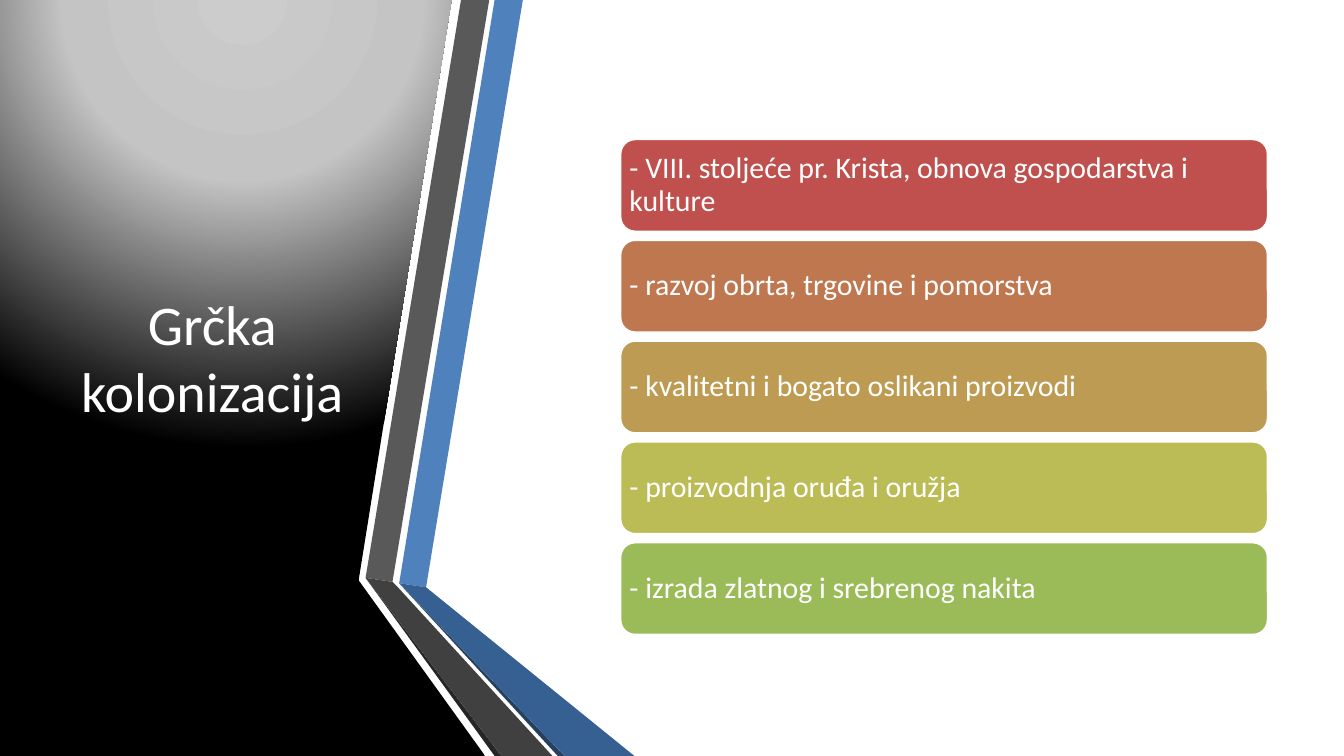
"""Builds the slide on Greek colonisation."""
from lxml import etree
from pptx import Presentation
from pptx.dml.color import RGBColor
from pptx.enum.shapes import MSO_SHAPE
from pptx.enum.text import MSO_ANCHOR, PP_ALIGN
from pptx.oxml.ns import qn
from pptx.util import Inches, Pt

ROUND_RECT = MSO_SHAPE.ROUNDED_RECTANGLE
MIDDLE = MSO_ANCHOR.MIDDLE
LEFT, CENTER = PP_ALIGN.LEFT, PP_ALIGN.CENTER

W = 10
H = W * 9 / 16
UNITS = 1000
FONT = "Calibri"

WHITE = RGBColor(0xFF, 0xFF, 0xFF)
BLACK = RGBColor(0, 0, 0)
SILVER = RGBColor(0xCC, 0xCC, 0xCC)
GRAY = RGBColor(0xC4, 0xC4, 0xC4)
PANEL_STOPS = [(0, SILVER), (40, GRAY), (100, BLACK)]
PANEL_FOCUS = {"l": 50, "t": -80, "r": 50, "b": 180}

PANEL = [(0, 0), (3.36, 0), (2.67, 4.31), (2.67, 4.32), (3.61, H), (0, H)]
RIBBONS = [
    (RGBColor(0x4F, 0x81, 0xBD), [(2.97, 4.34), (3.17, 4.37), (3.89, 0), (3.68, 0)]),
    (RGBColor(0x59, 0x59, 0x59), [(3.64, 0), (3.43, 0), (2.72, 4.3), (2.92, 4.33)]),
    (RGBColor(0x26, 0x26, 0x26), [(2.72, 4.3), (3.68, H), (3.73, H)]),
    (RGBColor(0x25, 0x40, 0x61), [(2.97, 4.34), (4.15, H), (4.2, H)]),
    (RGBColor(0x37, 0x60, 0x92), [(2.97, 4.34), (4.2, H), (4.72, H), (3.17, 4.37)]),
    (RGBColor(0x40, 0x40, 0x40),
     [(4.11, H), (2.96, 4.37), (2.92, 4.33), (2.72, 4.3), (3.73, H)]),
]

BAR_LEFT, BAR_TOP, BAR_WIDTH, BAR_HEIGHT = 4.61, 1.03, 4.83, 0.7
BAR_PITCH = 0.75
BARS = [
    (RGBColor(0xC0, 0x50, 0x4D), "- VIII. stoljeće pr. Krista, obnova gospodarstva i kulture"),
    (RGBColor(0xBF, 0x77, 0x50), "- razvoj obrta, trgovine i pomorstva"),
    (RGBColor(0xBD, 0x9B, 0x53), "- kvalitetni i bogato oslikani proizvodi"),
    (RGBColor(0xBC, 0xBC, 0x56), "- proizvodnja oruđa i oružja"),
    (RGBColor(0x9B, 0xBB, 0x59), "- izrada zlatnog i srebrenog nakita"),
]


def add_polygon(s, points, color):
    start, *rest = [(x * UNITS, y * UNITS) for x, y in points]
    builder = s.shapes.build_freeform(*start, scale=Inches(1) / UNITS)
    builder.add_line_segments(rest, close=True)
    sp = builder.convert_to_shape()
    sp.shadow.inherit = False
    sp.fill.solid()
    sp.fill.fore_color.rgb = color
    sp.line.fill.background()
    return sp


def set_radial_fill(sp, stops, focus):
    solid = sp._element.spPr.find(qn("a:solidFill"))
    grad = etree.Element(qn("a:gradFill"), rotWithShape="1")
    stop_list = etree.SubElement(grad, qn("a:gsLst"))
    for pos, color in stops:
        gs = etree.SubElement(stop_list, qn("a:gs"), pos=str(pos * 1000))
        etree.SubElement(gs, qn("a:srgbClr"), val=str(color))
    circle = etree.SubElement(grad, qn("a:path"), {"path": "circle"})
    sides = {side: str(share * 1000) for side, share in focus.items()}
    etree.SubElement(circle, qn("a:fillToRect"), sides)
    solid.getparent().replace(solid, grad)


def add_text(sp, text, size, align):
    tf = sp.text_frame
    tf.word_wrap = True
    tf.vertical_anchor = MIDDLE
    p = tf.paragraphs[0]
    p.alignment = align
    r = p.add_run()
    r.text = text
    r.font.name = FONT
    r.font.size = Pt(size)
    r.font.color.rgb = WHITE
    return tf


def add_title(s, text):
    box = s.shapes.add_textbox(Inches(0.44), Inches(0.56), Inches(2.28), Inches(4.19))
    add_text(box, text, 30, CENTER)


def add_bar(s, row, color, text):
    top = BAR_TOP + row * BAR_PITCH
    sp = s.shapes.add_shape(ROUND_RECT, Inches(BAR_LEFT), Inches(top),
                            Inches(BAR_WIDTH), Inches(BAR_HEIGHT))
    sp.shadow.inherit = False
    sp.fill.solid()
    sp.fill.fore_color.rgb = color
    sp.line.color.rgb = WHITE
    sp.line.width = Pt(2)
    tf = add_text(sp, text, 16, LEFT)
    tf.margin_left = tf.margin_right = tf.margin_top = tf.margin_bottom = Inches(0.04)
    tf.paragraphs[0].line_spacing = 0.9


def main():
    prs = Presentation()
    prs.slide_width, prs.slide_height = Inches(W), Inches(H)
    s = prs.slides.add_slide(prs.slide_layouts[6])
    panel = add_polygon(s, PANEL, BLACK)
    set_radial_fill(panel, PANEL_STOPS, PANEL_FOCUS)
    for color, points in RIBBONS:
        add_polygon(s, points, color)
    add_title(s, "Grčka kolonizacija")
    for row, (color, text) in enumerate(BARS):
        add_bar(s, row, color, text)
    prs.save("out.pptx")


if __name__ == "__main__":
    main()
